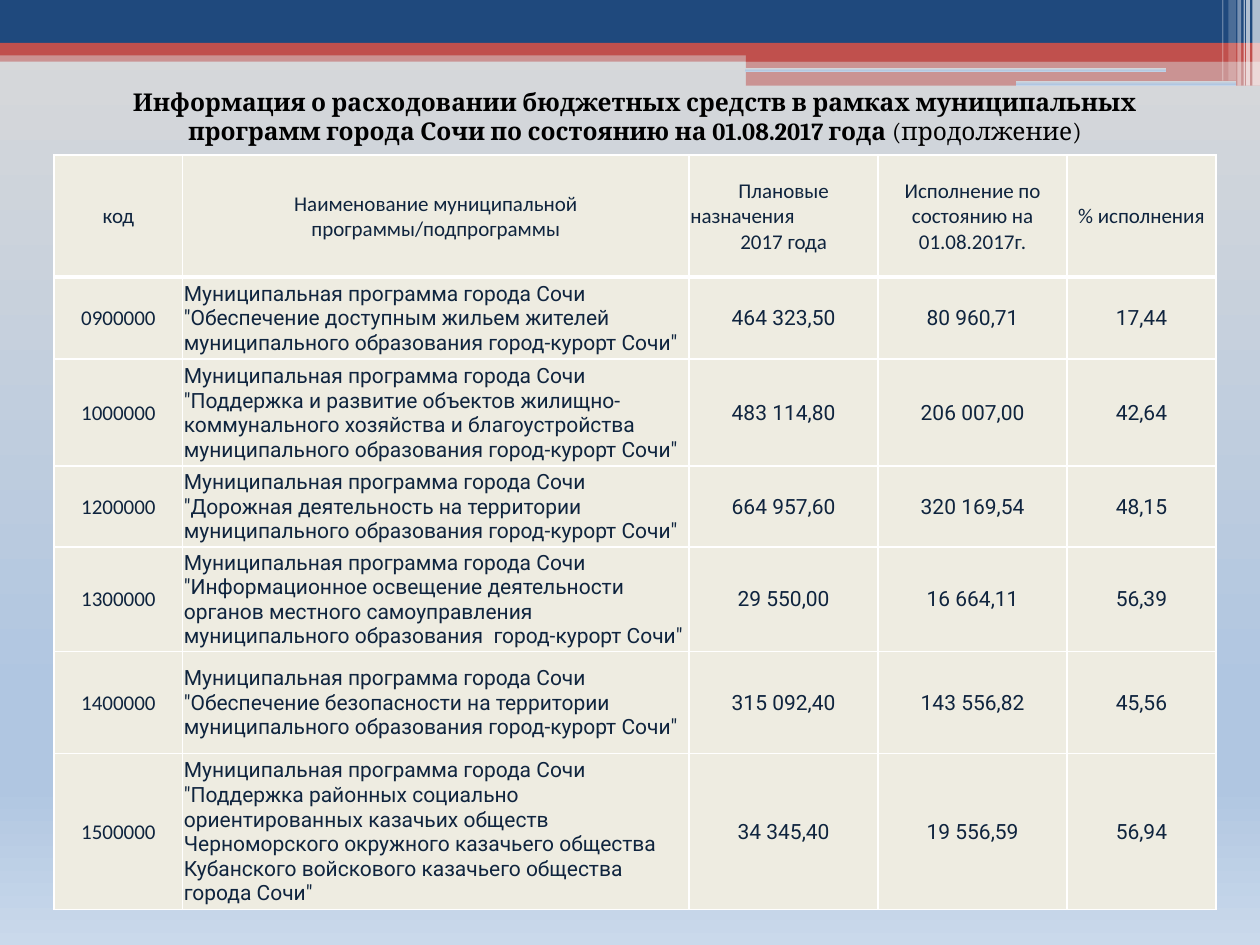
import pptx
import pptx.util
import pptx.dml.color
import pptx.enum.shapes
import pptx.enum.text
import pptx.oxml
import pptx.oxml.ns
from dataclasses import dataclass

Inches = pptx.util.Inches
Pt = pptx.util.Pt
RGB = pptx.dml.color.RGBColor.from_string
Shape = pptx.enum.shapes.MSO_SHAPE
Align = pptx.enum.text.PP_ALIGN
Anchor = pptx.enum.text.MSO_ANCHOR
qn = pptx.oxml.ns.qn
NS = 'xmlns:a="http://schemas.openxmlformats.org/drawingml/2006/main"'


@dataclass(frozen=True)
class Theme:
    navy: str = "1F497D"
    red: str = "C0504D"
    white: str = "FFFFFF"
    cream: str = "EEECE1"
    ink: str = "0F243E"
    black: str = "000000"
    sky: tuple = ((0, "D9D9D9"), (74, "B0C6E1"), (83, "B0C6E1"), (100, "CAD9EB"))
    title_font: str = "Cambria"
    label_font: str = "Calibri"
    body_font: str = "Roboto"
    title_size: int = 14
    table_size: int = 12
    rule: int = 1
    header_rule: int = 3


THEME = Theme()

TITLE = ("Информация о расходовании бюджетных средств в рамках муниципальных "
         "программ города Сочи по состоянию на 01.08.2017 года ")
TITLE_NOTE = "(продолжение)"

HEADINGS = [
    ["код"],
    ["Наименование муниципальной программы/подпрограммы"],
    ["Плановые", ("назначения", Align.LEFT), "2017 года"],
    ["Исполнение по состоянию на 01.08.2017г."],
    ["% исполнения"],
]
PROGRAM_PREFIX = "Муниципальная программа города Сочи "
PROGRAMS = [
    ("0900000", '"Обеспечение доступным жильем жителей муниципального образования '
     'город-курорт Сочи"', "464 323,50", "80 960,71", "17,44"),
    ("1000000", '"Поддержка и развитие объектов жилищно-коммунального хозяйства и '
     'благоустройства муниципального образования город-курорт Сочи"',
     "483 114,80", "206 007,00", "42,64"),
    ("1200000", '"Дорожная деятельность на территории муниципального образования '
     'город-курорт Сочи"', "664 957,60", "320 169,54", "48,15"),
    ("1300000", '"Информационное освещение деятельности органов местного '
     'самоуправления муниципального образования  город-курорт Сочи"',
     "29 550,00", "16 664,11", "56,39"),
    ("1400000", '"Обеспечение безопасности на территории муниципального образования '
     'город-курорт Сочи"', "315 092,40", "143 556,82", "45,56"),
    ("1500000", '"Поддержка районных социально ориентированных казачьих обществ '
     'Черноморского окружного казачьего общества Кубанского войскового казачьего '
     'общества города Сочи"', "34 345,40", "19 556,59", "56,94"),
]
COLUMN_WIDTHS = [1.02, 4.02, 1.5, 1.5, 1.18]
ROW_HEIGHTS = [0.97, 0.65, 0.85, 0.64, 0.83, 0.81, 1.24]

BANDS = [
    (0, 0.4, 10, 0.09, THEME.red, 50),
    (0, 0, 10, 0.34, THEME.navy, 100),
    (0, 0.34, 10, 0.1, THEME.red, 100),
    (5.92, 0.39, 4.08, 0.1, THEME.red, 100),
    (5.92, 0.48, 4.08, 0.2, THEME.red, 50),
]
SLOTS = [(5.91, 0.54, 3.35, 0.03), (8.06, 0.64, 1.75, 0.04)]
STRIPES = [(9.94, 0.06, 0.68, 65), (9.89, 0.03, 0.68, 65), (9.87, 0.01, 0.68, 60),
           (9.82, 0.03, 0.68, 40), (9.75, 0.06, 0.64, 20), (9.7, 0.01, 0.64, 30)]


def write(paragraph, text, *, font, size, color, bold=False, align=Align.CENTER):
    paragraph.alignment = align
    run = paragraph.add_run()
    run.text = text
    run.font.name = font
    run.font.size = Pt(size)
    run.font.bold = bold
    run.font.color.rgb = RGB(color)


def fill_sky(fill, owner):
    fill.gradient()
    fill.gradient_angle = 270
    stops = next(owner.iter(qn("a:gsLst")))
    for stop in list(stops):
        stops.remove(stop)
    for position, color in THEME.sky:
        stops.append(pptx.oxml.parse_xml(
            f'<a:gs {NS} pos="{position * 1000}"><a:srgbClr val="{color}"/></a:gs>'))


def add_block(slide, left, top, width, height, preset=Shape.RECTANGLE):
    block = slide.shapes.add_shape(
        preset, Inches(left), Inches(top), Inches(width), Inches(height))
    block.shadow.inherit = False
    block.line.fill.background()
    return block


def add_band(slide, left, top, width, height, color, opacity):
    band = add_block(slide, left, top, width, height)
    band.fill.solid()
    band.fill.fore_color.rgb = RGB(color)
    if opacity < 100:
        tint = next(band.element.spPr.iter(qn("a:srgbClr")))
        tint.append(pptx.oxml.parse_xml(f'<a:alpha {NS} val="{opacity * 1000}"/>'))


def add_decoration(slide):
    fill_sky(slide.background.fill, slide.element)
    for band in BANDS:
        add_band(slide, *band)
    for slot in SLOTS:
        opening = add_block(slide, *slot, preset=Shape.ROUNDED_RECTANGLE)
        fill_sky(opening.fill, opening.element)
    for left, width, height, opacity in STRIPES:
        add_band(slide, left, 0, width, height, THEME.white, opacity)


def style_cell(cell, row):
    cell.vertical_anchor = Anchor.MIDDLE
    cell.margin_left = cell.margin_right = cell.margin_top = Inches(0.01)
    cell.margin_bottom = 0
    cell.fill.solid()
    cell.fill.fore_color.rgb = RGB(THEME.cream)
    top = THEME.header_rule if row == 1 else THEME.rule
    bottom = THEME.header_rule if row == 0 else THEME.rule
    rules = [("L", THEME.rule), ("R", THEME.rule), ("T", top), ("B", bottom)]
    properties = cell._tc.get_or_add_tcPr()
    for index, (side, weight) in enumerate(rules):
        properties.insert(index, pptx.oxml.parse_xml(
            f'<a:ln{side} {NS} w="{Pt(weight)}"><a:solidFill>'
            f'<a:srgbClr val="{THEME.white}"/></a:solidFill></a:ln{side}>'))


def add_programs(slide):
    budget = slide.shapes.add_table(
        len(ROW_HEIGHTS), len(COLUMN_WIDTHS), Inches(0.43), Inches(1.23),
        Inches(sum(COLUMN_WIDTHS)), Inches(sum(ROW_HEIGHTS))).table
    budget.horz_banding = False
    for column, width in zip(budget.columns, COLUMN_WIDTHS):
        column.width = Inches(width)
    for row, height in zip(budget.rows, ROW_HEIGHTS):
        row.height = Inches(height)
    entries = [HEADINGS] + [
        [[code], [(PROGRAM_PREFIX + name, Align.LEFT)], *([figure] for figure in figures)]
        for code, name, *figures in PROGRAMS]
    for r, entry in enumerate(entries):
        for c, lines in enumerate(entry):
            cell = budget.cell(r, c)
            style_cell(cell, r)
            font = THEME.label_font if r == 0 or c == 0 else THEME.body_font
            for index, line in enumerate(lines):
                text, align = (line, Align.CENTER) if isinstance(line, str) else line
                frame = cell.text_frame
                paragraph = frame.add_paragraph() if index else frame.paragraphs[0]
                write(paragraph, text, font=font, size=THEME.table_size,
                      color=THEME.ink, align=align)


def add_title(slide):
    heading = slide.shapes.add_textbox(
        Inches(0.59), Inches(0.64), Inches(8.9), Inches(0.57)).text_frame
    heading.word_wrap = True
    heading.auto_size = pptx.enum.text.MSO_AUTO_SIZE.SHAPE_TO_FIT_TEXT
    for text, bold in [(TITLE, True), (TITLE_NOTE, False)]:
        write(heading.paragraphs[0], text, font=THEME.title_font,
              size=THEME.title_size, color=THEME.black, bold=bold)


def main():
    """Build the slide on municipal programme spending."""
    deck = pptx.Presentation()
    deck.slide_width, deck.slide_height = Inches(10), Inches(7.5)
    slide = deck.slides.add_slide(deck.slide_layouts[6])
    add_decoration(slide)
    add_programs(slide)
    add_title(slide)
    deck.save("out.pptx")


if __name__ == "__main__":
    main()
